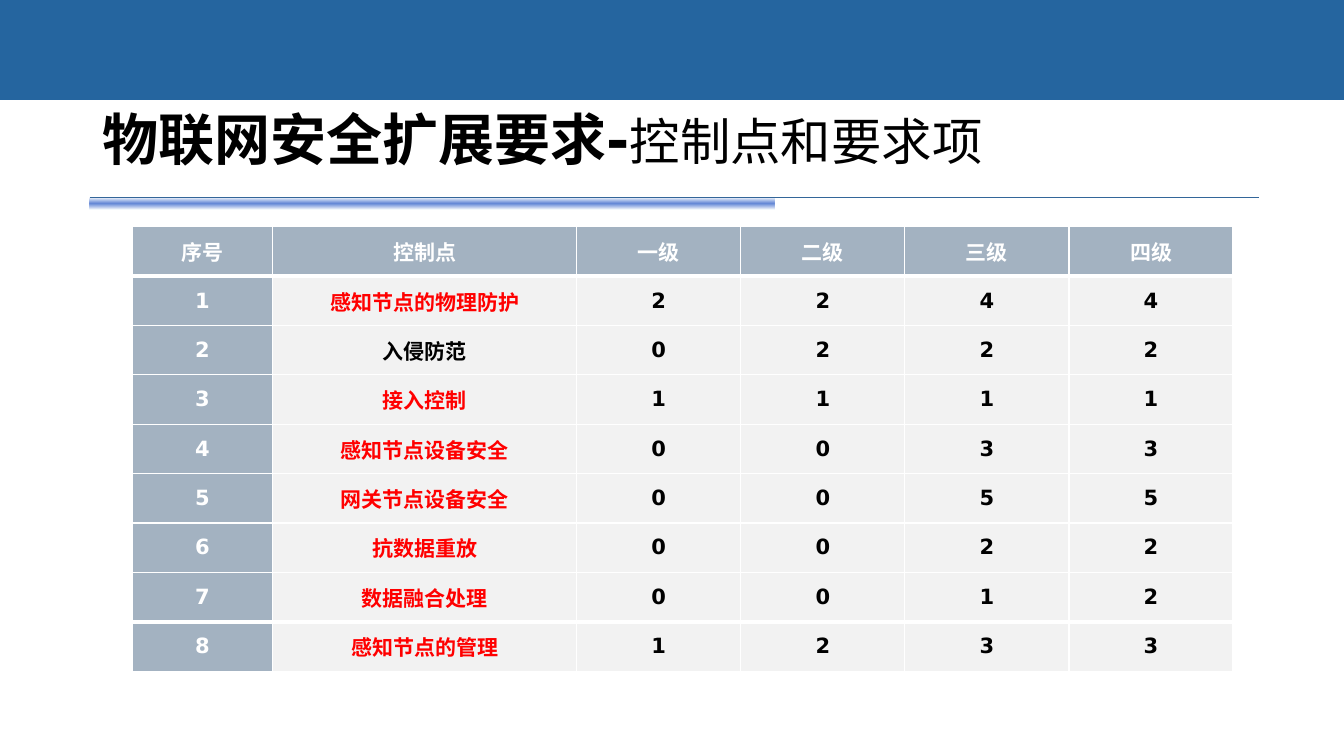
"""Build the slide on control points of the IoT security extension requirements."""
from dataclasses import dataclass

import lxml.etree
import pptx
import pptx.dml.color
import pptx.enum.shapes
import pptx.enum.text
import pptx.oxml
import pptx.oxml.ns
import pptx.util

SLIDE_WIDTH = pptx.util.Inches(13.33)
SLIDE_HEIGHT = pptx.util.Inches(7.5)
FONT = "DejaVu Sans"
BLACK, WHITE, RED = "000000", "FFFFFF", "FF0000"
BAND_BLUE, RULE_BLUE = "25659F", "336699"
GLOW_EDGE, GLOW_CORE = "5781D5", "6387D6"
HEADING_GREY, BODY_GREY = "A3B2C1", "F2F2F2"
THIN, THICK = 1, 3


@dataclass(frozen=True)
class Area:
    """Place on the slide, in percent of its width and height."""

    left: float
    top: float
    width: float
    height: float

    def box(self) -> tuple[int, int, int, int]:
        """Return left, top, width and height as lengths."""
        return across(self.left), down(self.top), across(self.width), down(self.height)


@dataclass(frozen=True)
class ControlPoint:
    """One control point with its number of requirements at each level."""

    name: str
    levels: tuple[int, int, int, int]
    colour: str = RED


@dataclass(frozen=True)
class TitlePart:
    """A stretch of the title with its own weight and size."""

    text: str
    size: float
    bold: bool


BAND = Area(0, 0, 100, 13.2)
TITLE = Area(6.9, 9.07, 75.02, 14.27)
GLOW = Area(6.68, 26.13, 50.94, 1.6)
RULE = Area(6.68, 26.13, 87.02, 0)
REQUIREMENTS = Area(9.83, 30, 81.92, 58.8)
COLUMN_WIDTHS = (10.45, 22.63, *[12.21] * 4)

TITLE_PARTS = (
    TitlePart("物联网安全扩展要求-", 40, True),
    TitlePart("控制点和要求项", 36, False),
)
HEADINGS = ("序号", "控制点", "一级", "二级", "三级", "四级")
CONTROL_POINTS = (
    ControlPoint("感知节点的物理防护", (2, 2, 4, 4)),
    ControlPoint("入侵防范", (0, 2, 2, 2), BLACK),
    ControlPoint("接入控制", (1, 1, 1, 1)),
    ControlPoint("感知节点设备安全", (0, 0, 3, 3)),
    ControlPoint("网关节点设备安全", (0, 0, 5, 5)),
    ControlPoint("抗数据重放", (0, 0, 2, 2)),
    ControlPoint("数据融合处理", (0, 0, 1, 2)),
    ControlPoint("感知节点的管理", (1, 2, 3, 3)),
)


def across(percent: float) -> int:
    """Turn a share of the slide's width into a length."""
    return round(SLIDE_WIDTH * percent / 100)


def down(percent: float) -> int:
    """Turn a share of the slide's height into a length."""
    return round(SLIDE_HEIGHT * percent / 100)


def rgb(colour: str) -> pptx.dml.color.RGBColor:
    """Read a hex colour."""
    return pptx.dml.color.RGBColor.from_string(colour)


def add_bar(slide, area: Area):
    """Add a rectangle without outline or shadow."""
    bar = slide.shapes.add_shape(pptx.enum.shapes.MSO_SHAPE.RECTANGLE, *area.box())
    bar.shadow.inherit = False
    bar.line.fill.background()
    return bar


def fade_edges(bar) -> None:
    """Fill a bar with a vertical gradient that is clear at top and bottom."""
    bar.fill.gradient()
    bar.fill.gradient_angle = 90
    stops = bar.element.find(".//" + pptx.oxml.ns.qn("a:gsLst"))
    for stop in list(stops):
        stops.remove(stop)
    for position, colour, alpha in ((0, GLOW_EDGE, 0), (50, GLOW_CORE, 100), (100, GLOW_EDGE, 0)):
        stops.append(pptx.oxml.parse_xml(
            f'<a:gs {pptx.oxml.ns.nsdecls("a")} pos="{position * 1000}">'
            f'<a:srgbClr val="{colour}"><a:alpha val="{alpha * 1000}"/></a:srgbClr></a:gs>'
        ))


def add_rule(slide, area: Area) -> None:
    """Add the thin line under the title."""
    left, top, width, height = area.box()
    rule = slide.shapes.add_connector(
        pptx.enum.shapes.MSO_CONNECTOR.STRAIGHT, left, top, left + width, top + height
    )
    rule.line.color.rgb = rgb(RULE_BLUE)
    rule.line.width = pptx.util.Pt(0.75)
    lxml.etree.SubElement(rule.element.spPr, pptx.oxml.ns.qn("a:effectLst"))


def write_title(slide) -> None:
    """Place the title in front of the band and write its parts."""
    title = slide.shapes.title
    title.element.getparent().append(title.element)
    title.left, title.top, title.width, title.height = TITLE.box()
    frame = title.text_frame
    frame.word_wrap = True
    frame.auto_size = pptx.enum.text.MSO_AUTO_SIZE.NONE
    frame.vertical_anchor = pptx.enum.text.MSO_ANCHOR.BOTTOM
    heading = frame.paragraphs[0]
    heading.alignment = pptx.enum.text.PP_ALIGN.LEFT
    heading.line_spacing = 0.8
    heading.font.name = FONT
    heading.font.color.rgb = rgb(BLACK)
    for part in TITLE_PARTS:
        run = heading.add_run()
        run.text = part.text
        run.font.size = pptx.util.Pt(part.size)
        run.font.bold = part.bold


def add_borders(cell, top: float, bottom: float) -> None:
    """Draw white borders around a cell, with widths in points."""
    properties = cell._tc.get_or_add_tcPr()
    for side, width in (("L", THIN), ("R", THIN), ("T", top), ("B", bottom)):
        properties.append(pptx.oxml.parse_xml(
            f'<a:ln{side} {pptx.oxml.ns.nsdecls("a")} w="{pptx.util.Pt(width)}">'
            f'<a:solidFill><a:srgbClr val="{WHITE}"/></a:solidFill></a:ln{side}>'
        ))


def write_cell(cell, text: str, colour: str, background: str) -> None:
    """Fill a cell and write its centred bold text."""
    cell.fill.solid()
    cell.fill.fore_color.rgb = rgb(background)
    cell.vertical_anchor = pptx.enum.text.MSO_ANCHOR.MIDDLE
    cell.margin_left = cell.margin_right = pptx.util.Inches(0.07)
    cell.margin_top = cell.margin_bottom = 0
    cell.text = text
    entry = cell.text_frame.paragraphs[0]
    entry.alignment = pptx.enum.text.PP_ALIGN.CENTER
    entry.font.name = FONT
    entry.font.size = pptx.util.Pt(15)
    entry.font.bold = True
    entry.font.color.rgb = rgb(colour)


def add_requirements(slide) -> None:
    """Add the table of control points by protection level."""
    rows = [[(heading, WHITE, HEADING_GREY) for heading in HEADINGS]]
    for number, point in enumerate(CONTROL_POINTS, start=1):
        counts = [(str(count), BLACK, BODY_GREY) for count in point.levels]
        rows.append([(str(number), WHITE, HEADING_GREY), (point.name, point.colour, BODY_GREY), *counts])
    last = len(rows) - 1
    table = slide.shapes.add_table(len(rows), len(HEADINGS), *REQUIREMENTS.box()).table
    table.first_row = table.horz_banding = False
    for column, width in zip(table.columns, COLUMN_WIDTHS):
        column.width = across(width)
    for row, entries in enumerate(rows):
        table.rows[row].height = down(REQUIREMENTS.height / len(rows))
        top = THICK if row in (1, last) else THIN
        bottom = THICK if row in (0, last - 1) else THIN
        for column, entry in enumerate(entries):
            cell = table.cell(row, column)
            add_borders(cell, top, bottom)
            write_cell(cell, *entry)


def main() -> None:
    """Build and save the slide."""
    deck = pptx.Presentation()
    deck.slide_width, deck.slide_height = SLIDE_WIDTH, SLIDE_HEIGHT
    slide = deck.slides.add_slide(deck.slide_layouts.get_by_name("Title Only"))
    fade_edges(add_bar(slide, GLOW))
    add_rule(slide, RULE)
    band = add_bar(slide, BAND)
    band.fill.solid()
    band.fill.fore_color.rgb = rgb(BAND_BLUE)
    write_title(slide)
    add_requirements(slide)
    deck.save("out.pptx")


if __name__ == "__main__":
    main()
